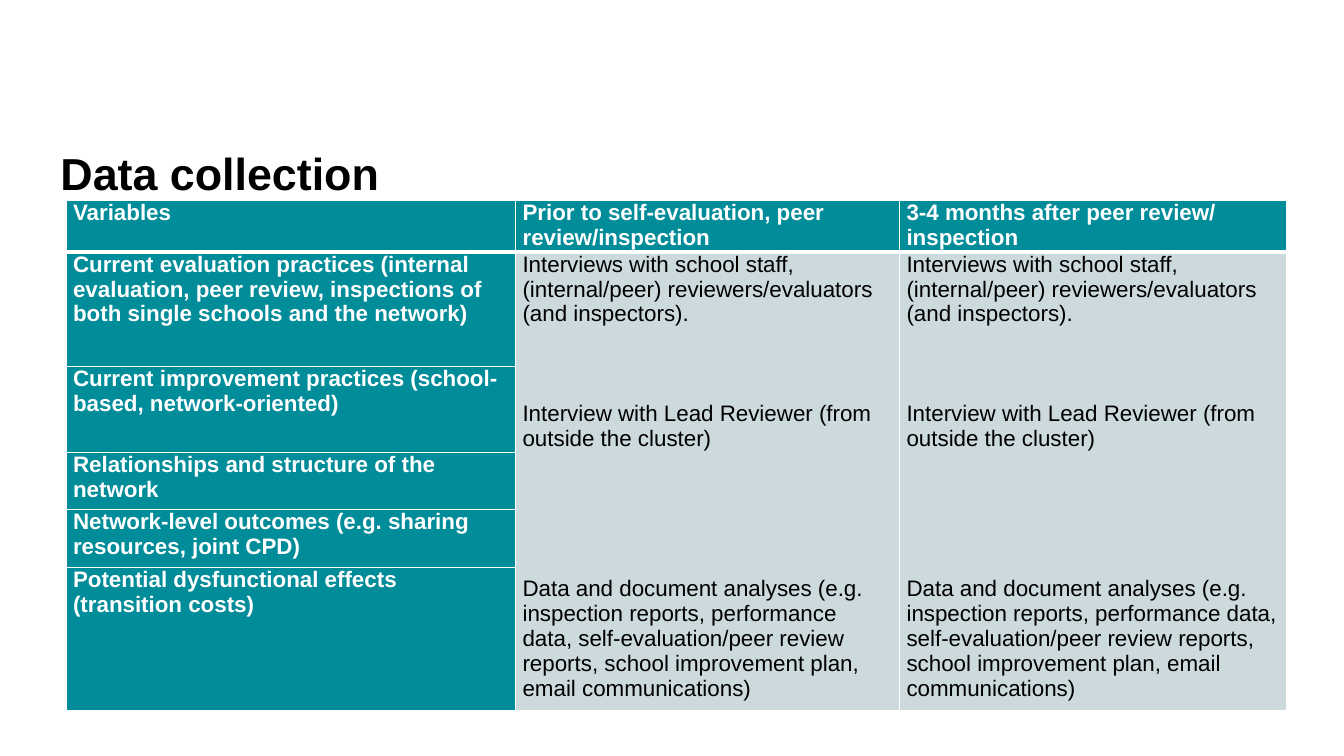
from dataclasses import dataclass

import lxml.etree
import pptx
import pptx.dml.color
import pptx.enum.text
import pptx.oxml.ns
import pptx.table
import pptx.util

Pt = pptx.util.Pt
COLORS = {"teal": "008C99", "mist": "CCDADE", "white": "FFFFFF", "black": "000000"}
FONT = "Arial"
COLUMN_WIDTHS = [321.1, 274.3, 276.5]
ROW_HEIGHTS = [36.7, 82, 61.2, 41, 41, 102.2]
HEADERS = [
    "Variables",
    "Prior to self-evaluation, peer review/inspection",
    "3-4 months after peer review/ inspection",
]
VARIABLES = [
    "Current evaluation practices (internal evaluation, peer review, "
    "inspections of both single schools and the network)",
    "Current improvement practices (school-based, network-oriented)",
    "Relationships and structure of the network",
    "Network-level outcomes (e.g. sharing resources, joint CPD)",
    "Potential dysfunctional effects (transition costs)",
]


@dataclass(frozen=True)
class Entry:
    text: str
    space_before: float = 0


@dataclass(frozen=True)
class CellStyle:
    fill: str
    text: str
    bold: bool


HEADING = CellStyle("teal", "white", True)
BODY = CellStyle("mist", "black", False)
METHODS = [
    Entry("Interviews with school staff, (internal/peer) reviewers/evaluators (and inspectors)."),
    Entry("Interview with Lead Reviewer (from outside the cluster)", 53.6),
    Entry(
        "Data and document analyses (e.g. inspection reports, performance data, "
        "self-evaluation/peer review reports, school improvement plan, email communications)",
        89.4,
    ),
]


def rgb(color: str) -> pptx.dml.color.RGBColor:
    return pptx.dml.color.RGBColor.from_string(COLORS[color])


def format_font(font, size: float, color: str, bold: bool) -> None:
    font.name = FONT
    font.size = Pt(size)
    font.bold = bold
    font.color.rgb = rgb(color)


def add_borders(cell: pptx.table._Cell, bottom_width: float) -> None:
    """Give the cell white borders; call before setting the fill, which must follow them."""
    qn = pptx.oxml.ns.qn
    properties = cell._tc.get_or_add_tcPr()
    for side, width in {"L": 1, "R": 1, "T": 1, "B": bottom_width}.items():
        line = lxml.etree.SubElement(properties, qn(f"a:ln{side}"), w=str(Pt(width)))
        fill = lxml.etree.SubElement(line, qn("a:solidFill"))
        lxml.etree.SubElement(fill, qn("a:srgbClr"), val=COLORS["white"])


def format_cell(cell: pptx.table._Cell, style: CellStyle, bottom_width: float = 1) -> None:
    add_borders(cell, bottom_width)
    cell.fill.solid()
    cell.fill.fore_color.rgb = rgb(style.fill)
    cell.margin_left = cell.margin_right = Pt(5)
    cell.margin_top = cell.margin_bottom = 0


def write_cell(cell: pptx.table._Cell, entries: list[Entry], style: CellStyle) -> None:
    for index, entry in enumerate(entries):
        frame = cell.text_frame
        paragraph = frame.add_paragraph() if index else frame.paragraphs[0]
        paragraph.text = entry.text
        if entry.space_before:
            paragraph.space_before = Pt(entry.space_before)
        format_font(paragraph.font, 16, style.text, style.bold)


def add_title(slide) -> None:
    title = slide.shapes.title
    title.left, title.top, title.width, title.height = Pt(36), Pt(100), Pt(244), Pt(46)
    frame = title.text_frame
    frame.text = "Data collection"
    frame.word_wrap = False
    frame.auto_size = pptx.enum.text.MSO_AUTO_SIZE.NONE
    frame.vertical_anchor = pptx.enum.text.MSO_ANCHOR.BOTTOM
    paragraph = frame.paragraphs[0]
    paragraph.alignment = pptx.enum.text.PP_ALIGN.LEFT
    format_font(paragraph.font, 32, "black", True)


def add_collection_table(slide) -> None:
    frame = slide.shapes.add_table(
        len(ROW_HEIGHTS), len(COLUMN_WIDTHS), Pt(47.2), Pt(143.3),
        Pt(sum(COLUMN_WIDTHS)), Pt(sum(ROW_HEIGHTS)),
    )
    table = frame.table
    for column, width in zip(table.columns, COLUMN_WIDTHS):
        column.width = Pt(width)
    for row, height in zip(table.rows, ROW_HEIGHTS):
        row.height = Pt(height)

    for column, header in enumerate(HEADERS):
        cell = table.cell(0, column)
        format_cell(cell, HEADING, bottom_width=3)
        write_cell(cell, [Entry(header)], HEADING)
    for row, variable in enumerate(VARIABLES, start=1):
        write_cell(table.cell(row, 0), [Entry(variable)], HEADING)
        for column in range(len(HEADERS)):
            format_cell(table.cell(row, column), BODY if column else HEADING)
    for column in range(1, len(HEADERS)):
        top = table.cell(1, column)
        top.merge(table.cell(len(VARIABLES), column))
        write_cell(top, METHODS, BODY)


def main() -> None:
    presentation = pptx.Presentation()
    presentation.slide_width, presentation.slide_height = Pt(960), Pt(540)
    slide = presentation.slides.add_slide(presentation.slide_layouts.get_by_name("Title Only"))
    add_title(slide)
    add_collection_table(slide)
    presentation.save("out.pptx")


if __name__ == "__main__":
    main()
